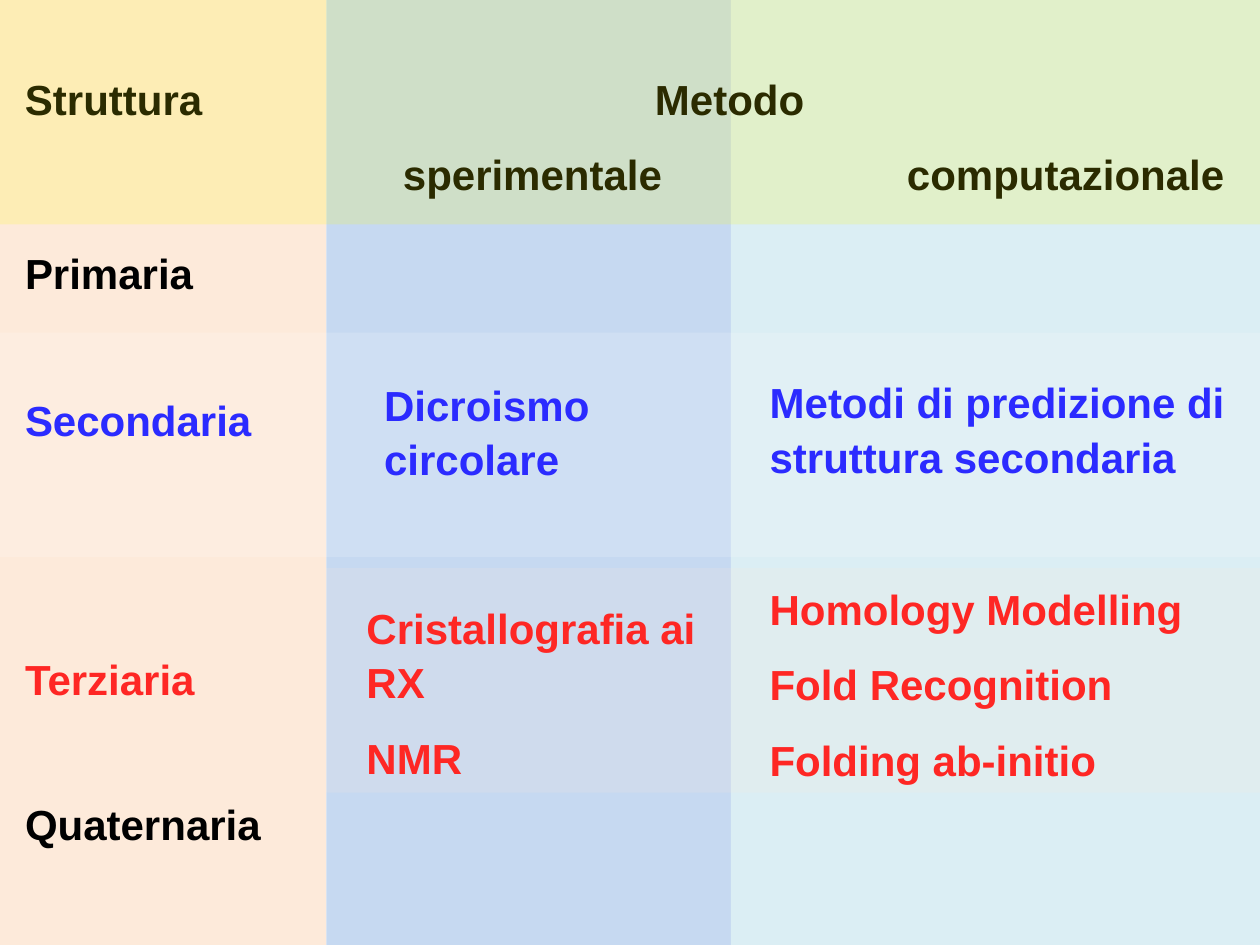
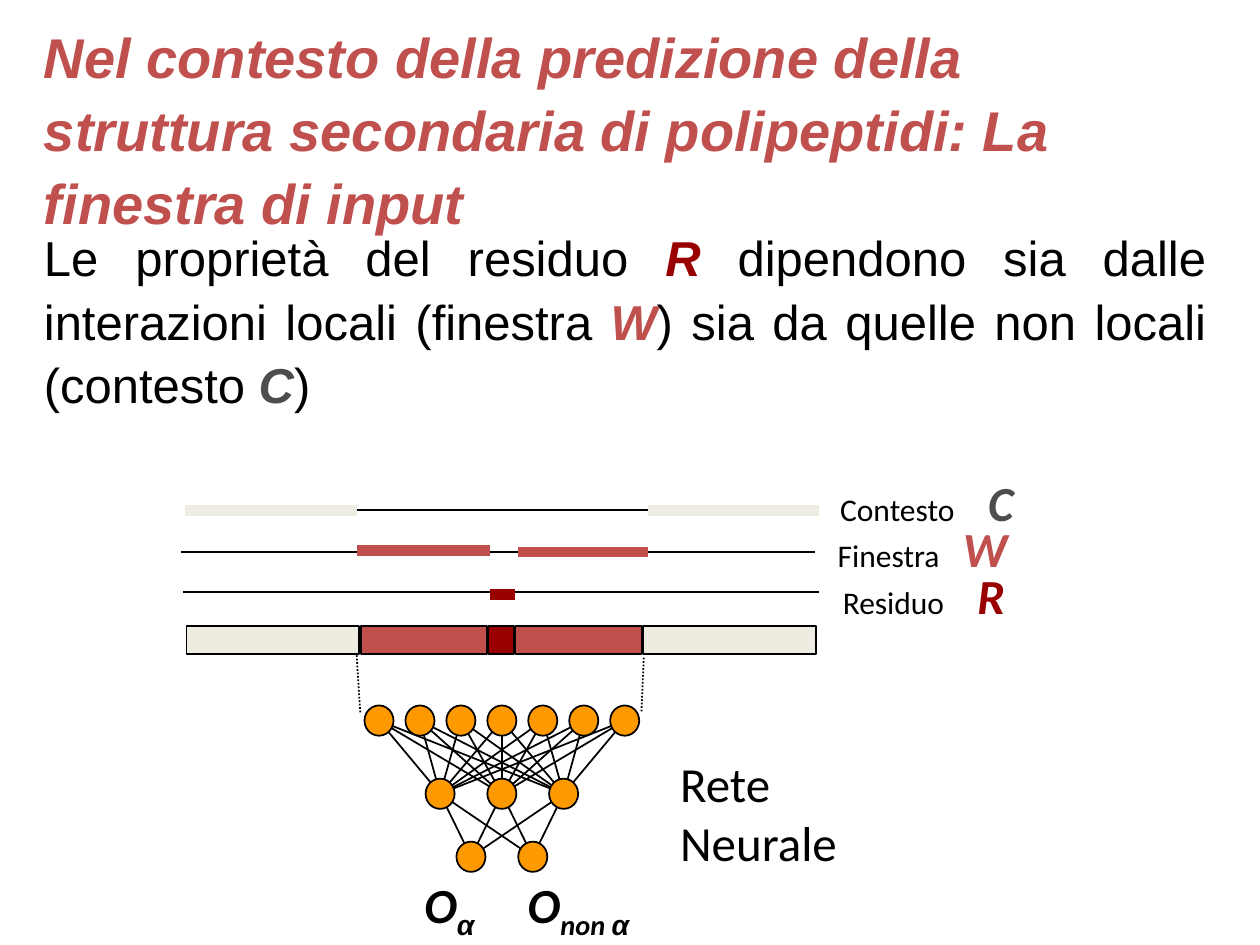
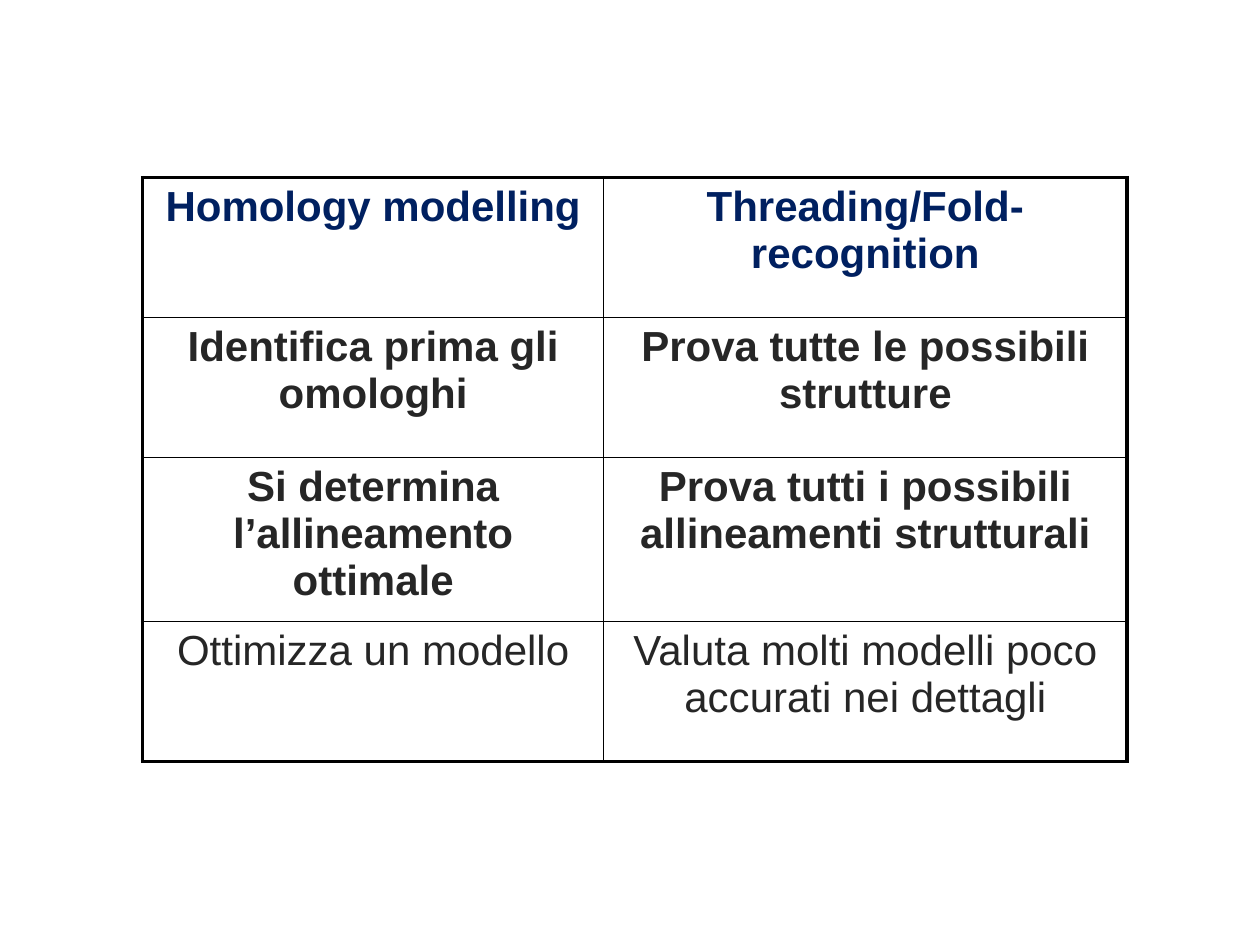
"""Builds three slides on methods for protein structure prediction."""
from itertools import pairwise, product

from lxml.etree import SubElement
from pptx import Presentation
from pptx.dml.color import RGBColor
from pptx.enum.dml import MSO_LINE
from pptx.enum.shapes import MSO_CONNECTOR, MSO_SHAPE
from pptx.enum.text import PP_ALIGN
from pptx.oxml.ns import qn
from pptx.util import Pt

WIDTH, HEIGHT = 720, 540
BLACK = RGBColor(0, 0, 0)
WHITE = RGBColor(255, 255, 255)
BLUE = RGBColor(0, 0, 255)
RED = RGBColor(255, 0, 0)
YELLOW = RGBColor(255, 255, 0)
PEACH = RGBColor(0xFD, 0xEA, 0xDA)
SKY = RGBColor(0xC6, 0xD9, 0xF1)
AQUA = RGBColor(0xDB, 0xEE, 0xF4)
SAND = RGBColor(0xEE, 0xEC, 0xE1)
BRICK = RGBColor(0xC0, 0x50, 0x4D)
DARK_RED = RGBColor(0x99, 0, 0)
GREY = RGBColor(0x4D, 0x4D, 0x4D)
ORANGE = RGBColor(0xFF, 0x99, 0)
NAVY = RGBColor(0, 0x20, 0x60)
CHARCOAL = RGBColor(0x26, 0x26, 0x26)

LABEL = {"name": "Arial", "size": Pt(24), "bold": True}
PLAIN = {"name": "Arial", "size": Pt(24), "bold": False}
TITLE = {"name": "Arial", "size": Pt(32), "bold": True, "italic": True}
BODY = {"name": "Arial", "size": Pt(28)}
KEY = {**BODY, "bold": True, "italic": True}
CAPTION = {"name": "Calibri", "size": Pt(18)}
NETWORK = {"name": "Calibri", "size": Pt(28)}
SYMBOL = {**NETWORK, "bold": True, "italic": True}
ARIAL_SPACING = 1.08
PARAGRAPH_GAP = 12

COLUMNS = [(186.5, PEACH), (231.1, SKY), (302.4, AQUA)]
BANDS = [(0, YELLOW), (190, WHITE), (324.7, PEACH)]
BAND_HEIGHT, BAND_ALPHA = 128.2, 17
STRUCTURES = [("Primaria", BLACK, 0), ("Secondaria", BLUE, 53),
              ("Terziaria", RED, 117), ("Quaternaria", BLACK, 52)]
METHODS = [
    ((212.4, 211, 226.8, 65.5), BLUE, ["Dicroismo circolare"]),
    ((202.3, 338.4, 214.6, 108.7), RED, ["Cristallografia ai RX", "NMR"]),
    ((432.7, 209.5, 279.4, 65.5), BLUE,
     ["Metodi di predizione di struttura secondaria"]),
    ((432.7, 327.6, 292.3, 123.8), RED,
     ["Homology Modelling", "Fold Recognition", "Folding ab-initio"]),
]
HEADINGS = [("Struttura\tMetodo", [360]),
            ("\tsperimentale\tcomputazionale", [216, 504])]

WINDOW_TITLE = ("Nel contesto della predizione della struttura secondaria di "
                "polipeptidi: La finestra di input")
WINDOW_TEXT = [
    ("Le proprietà del residuo ", BODY, BLACK), ("R ", KEY, DARK_RED),
    ("dipendono sia dalle interazioni locali (finestra ", BODY, BLACK),
    ("W", KEY, BRICK), (") sia da quelle non locali (contesto ", BODY, BLACK),
    ("C", KEY, GREY), (")", BODY, BLACK),
]
LEGEND = [("Contesto", "C", GREY, 473, 266.4, 84.5),
          ("Finestra", "W", BRICK, 471.6, 293, 71.5),
          ("Residuo", "R", DARK_RED, 474.5, 319.7, 77)]
TRACKS = [(105.8, 465.8, 291.6), (103.7, 465.8, 315.4), (104.4, 468, 338.4)]
MARKS = [(105.8, 203.8, 291.6, SAND), (370.1, 468, 291.6, SAND),
         (203.8, 280.1, 314.6, BRICK), (295.9, 370.1, 315.4, BRICK),
         (280.1, 294.5, 339.8, DARK_RED)]
SEGMENTS = [(98.6, SAND), (72, BRICK), (14.4, DARK_RED), (72, BRICK), (98.6, SAND)]
SEQUENCE_LEFT, SEQUENCE_TOP, SEQUENCE_HEIGHT, SEGMENT_GAP = 106.6, 357.8, 15.8, 1
PROJECTIONS = [(203.8, 374.4, 205.9, 407.5), (367.9, 375.8, 366.5, 407.5)]
LAYERS = [(7, 23.4, 411.8), (3, 35.3, 453.6), (2, 35.3, 489.6)]
NETWORK_CENTRE, NODE_WIDTH, NODE_HEIGHT = 286.8, 16.6, 17.3
OUTPUTS = [((235.4, 496, 50, 41), [("O", False, "Calibri"), ("α", True, "Arial")]),
           ((294.5, 496, 86, 41), [("O", False, "Calibri"), ("non ", True, "Calibri"),
                                   ("α", True, "Arial")])]

COMPARISON = [
    ("Homology modelling", "Threading/Fold-recognition", LABEL, NAVY, 80),
    ("Identifica prima gli omologhi", "Prova tutte le possibili strutture",
     LABEL, CHARCOAL, 80),
    ("Si determina l’allineamento ottimale",
     "Prova tutti i possibili allineamenti strutturali", LABEL, CHARCOAL, 93.6),
    ("Ottimizza un modello", "Valuta molti modelli poco accurati nei dettagli",
     PLAIN, CHARCOAL, 80),
]
COMPARISON_LEFT, COMPARISON_TOP = 81.5, 101.5
COMPARISON_WIDTHS = (263.5, 299)
OUTER, INNER = 2.25, 1


def add_run(paragraph, text, style, color):
    run = paragraph.add_run()
    run.text = text
    for attribute, value in style.items():
        setattr(run.font, attribute, value)
    run.font.color.rgb = color
    return run


def add_text(slide, place, paragraphs):
    """Each paragraph is (runs, format values, tab stops)."""
    frame = slide.shapes.add_textbox(*map(Pt, place)).text_frame
    frame.word_wrap = True
    for index, (runs, layout, tabs) in enumerate(paragraphs):
        paragraph = frame.add_paragraph() if index else frame.paragraphs[0]
        for attribute, value in layout.items():
            setattr(paragraph, attribute, value)
        if tabs:
            stops = SubElement(paragraph._p.get_or_add_pPr(), qn("a:tabLst"))
            for stop in tabs:
                SubElement(stops, qn("a:tab"), pos=str(Pt(stop)), algn="l")
        for text, style, color, *subscript in runs:
            run = add_run(paragraph, text, style, color)
            if any(subscript):
                run._r.get_or_add_rPr().set("baseline", "-25000")


def spaced(index, gap=PARAGRAPH_GAP):
    layout = {"line_spacing": ARIAL_SPACING}
    return {**layout, "space_before": Pt(gap)} if index else layout


def add_block(slide, kind, place, color, outlined=False, alpha=None):
    block = slide.shapes.add_shape(kind, *map(Pt, place))
    block.shadow.inherit = False
    block.fill.solid()
    block.fill.fore_color.rgb = color
    if alpha:
        SubElement(block._element.spPr.find(".//" + qn("a:srgbClr")),
                   qn("a:alpha"), val=str(alpha * 1000))
    if outlined:
        block.line.color.rgb = BLACK
        block.line.width = Pt(1)
    else:
        block.line.fill.background()


def add_line(slide, ends, color=BLACK, width=1, dash=None):
    line = slide.shapes.add_connector(MSO_CONNECTOR.STRAIGHT, *map(Pt, ends))
    line.line.color.rgb = color
    line.line.width = Pt(width)
    if dash:
        line.line.dash_style = dash
    SubElement(line._element.spPr, qn("a:effectLst"))


def build_methods(slide):
    left = 0
    for width, color in COLUMNS:
        add_block(slide, MSO_SHAPE.RECTANGLE, (left, 0, width, HEIGHT), color)
        left += width
    add_text(slide, (7.2, 135.4, 368.6, 400),
             [([(name, LABEL, color)], spaced(index, gap), [])
              for index, (name, color, gap) in enumerate(STRUCTURES)])
    for place, color, methods in METHODS:
        add_text(slide, place, [([(method, LABEL, color)], spaced(index), [])
                                for index, method in enumerate(methods)])
    add_text(slide, (7.2, 36, 712.8, 123.8),
             [([(heading, LABEL, BLACK)], spaced(index), tabs)
              for index, (heading, tabs) in enumerate(HEADINGS)])
    for top, color in BANDS:
        add_block(slide, MSO_SHAPE.RECTANGLE, (0, top, WIDTH, BAND_HEIGHT), color,
                  alpha=BAND_ALPHA)


def build_network(slide):
    layers = [[(NETWORK_CENTRE + (index - (count - 1) / 2) * pitch, y)
               for index in range(count)] for count, pitch, y in LAYERS]
    for upper, lower in pairwise(layers):
        for start, end in product(upper, lower):
            add_line(slide, (*start, *end))
    for x, y in sum(layers, []):
        add_block(slide, MSO_SHAPE.OVAL,
                  (x - NODE_WIDTH / 2, y - NODE_HEIGHT / 2, NODE_WIDTH, NODE_HEIGHT),
                  ORANGE, outlined=True)
    for place, parts in OUTPUTS:
        add_text(slide, place, [([(text, {**SYMBOL, "name": font}, BLACK, lowered)
                                  for text, lowered, font in parts], {}, [])])
    add_text(slide, (381.6, 427, 130, 75),
             [([("Rete Neurale", NETWORK, BLACK)], {}, [])])


def build_window(slide):
    add_text(slide, (18, 124, 678.2, 108),
             [(WINDOW_TEXT, {**spaced(0), "alignment": PP_ALIGN.JUSTIFY}, [])])
    build_network(slide)
    for start, end, y in TRACKS:
        add_line(slide, (start, y, end, y))
    left = SEQUENCE_LEFT
    for width, color in SEGMENTS:
        add_block(slide, MSO_SHAPE.RECTANGLE,
                  (left, SEQUENCE_TOP, width, SEQUENCE_HEIGHT), color, outlined=True)
        left += width + SEGMENT_GAP
    for start, end, y, color in MARKS:
        add_line(slide, (start, y, end, y), color, 6)
    for caption, symbol, color, left, top, tab in LEGEND:
        add_text(slide, (left, top, 140, 41),
                 [([(caption + "\t", CAPTION, BLACK), (symbol, SYMBOL, color)],
                   {}, [tab])])
    for ends in PROJECTIONS:
        add_line(slide, ends, dash=MSO_LINE.ROUND_DOT)
    add_text(slide, (18, 6.5, 678.2, 123.8),
             [([(WINDOW_TITLE, TITLE, BRICK)], spaced(0), [])])


def set_borders(cell, widths):
    properties = cell._tc.get_or_add_tcPr()
    for side, width in widths.items():
        border = SubElement(properties, qn("a:ln" + side), w=str(Pt(width)))
        fill = SubElement(border, qn("a:solidFill"))
        SubElement(fill, qn("a:srgbClr"), val=str(BLACK))


def build_comparison(slide):
    heights = [row[-1] for row in COMPARISON]
    table = slide.shapes.add_table(
        len(COMPARISON), len(COMPARISON_WIDTHS), Pt(COMPARISON_LEFT),
        Pt(COMPARISON_TOP), Pt(sum(COMPARISON_WIDTHS)), Pt(sum(heights))).table
    table.first_row = table.horz_banding = False
    for column, width in zip(table.columns, COMPARISON_WIDTHS):
        column.width = Pt(width)
    last = len(COMPARISON) - 1
    for index, (homology, threading, style, color, height) in enumerate(COMPARISON):
        table.rows[index].height = Pt(height)
        for side, text in enumerate((homology, threading)):
            cell = table.cell(index, side)
            set_borders(cell, {"L": INNER if side else OUTER,
                               "R": OUTER if side else INNER,
                               "T": INNER if index else OUTER,
                               "B": OUTER if index == last else INNER})
            cell.fill.background()
            paragraph = cell.text_frame.paragraphs[0]
            paragraph.alignment = PP_ALIGN.CENTER
            add_run(paragraph, text, style, color)


def main():
    deck = Presentation()
    deck.slide_width, deck.slide_height = Pt(WIDTH), Pt(HEIGHT)
    for build in (build_methods, build_window, build_comparison):
        build(deck.slides.add_slide(deck.slide_layouts[6]))
    deck.save("out.pptx")


if __name__ == "__main__":
    main()
